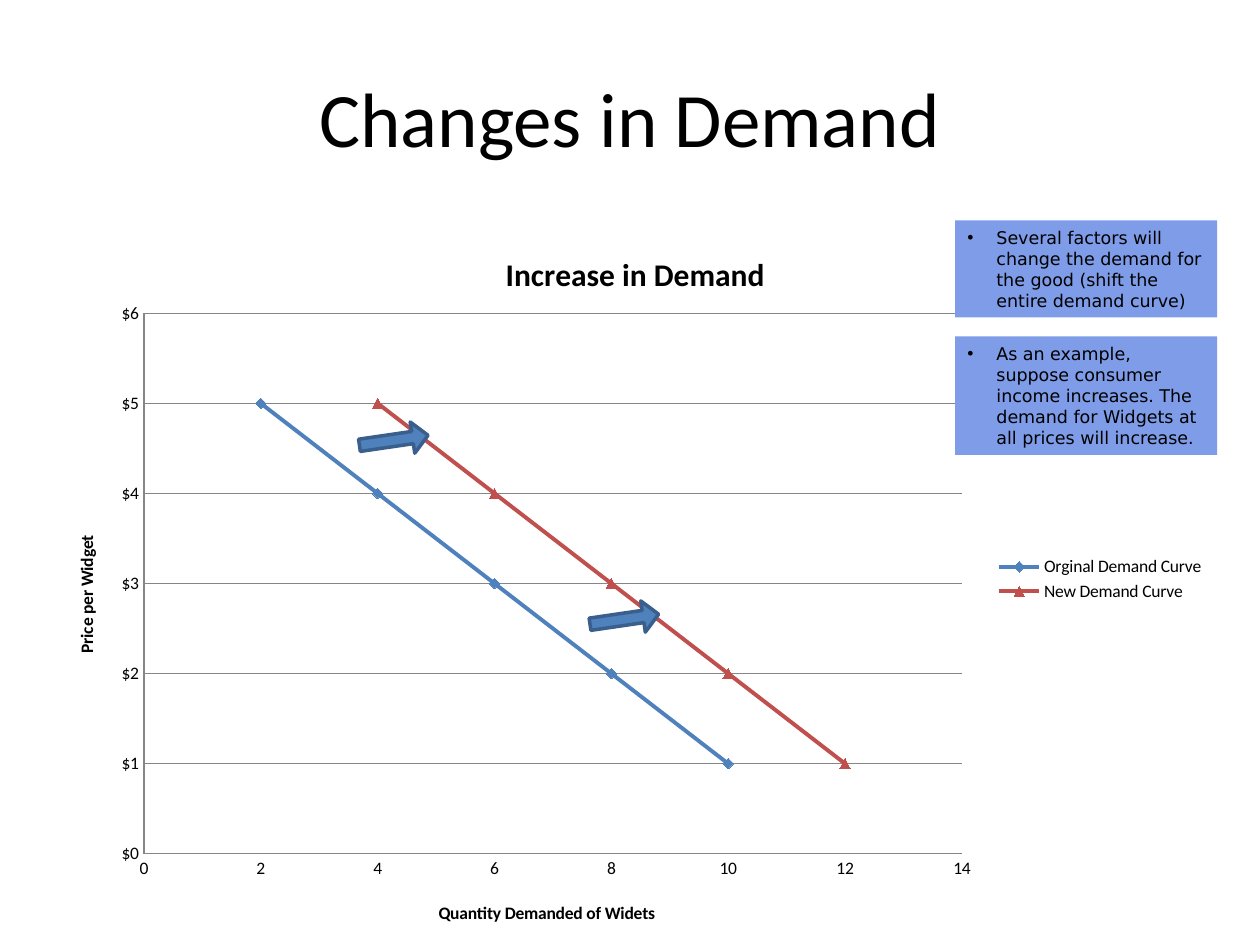
import dataclasses

import lxml.etree
import pptx
import pptx.chart.data
import pptx.dml.color
import pptx.enum.chart
import pptx.enum.shapes
import pptx.enum.text
import pptx.oxml
import pptx.oxml.ns
import pptx.util
from pptx.util import Inches

qn = pptx.oxml.ns.qn


@dataclasses.dataclass(frozen=True)
class Theme:
    """Colours, fonts and type sizes of the slide."""
    ink: str = "000000"
    paper: str = "FFFFFF"
    grid: str = "868686"
    note: str = "7E9CE8"
    original_curve: str = "4F81BD"
    new_curve: str = "C0504D"
    arrow_edge: str = "3A5F8C"
    heading_font: str = "Calibri"
    note_font: str = "DejaVu Sans"
    title_size: int = 44
    chart_title_size: int = 18
    small_size: int = 10


@dataclasses.dataclass(frozen=True)
class Box:
    """A region in inches."""
    left: float
    top: float
    width: float
    height: float

    def lengths(self):
        """Return the four values as lengths."""
        return tuple(Inches(value) for value in dataclasses.astuple(self))


THEME = Theme()


def rgb(code):
    """Turn a hex code into a colour."""
    return pptx.dml.color.RGBColor.from_string(code)


def format_font(font, size=THEME.small_size, name=THEME.heading_font, bold=False):
    """Set the size, typeface, weight and ink of a font."""
    font.size = pptx.util.Pt(size)
    font.name = name
    font.bold = bold
    font.color.rgb = rgb(THEME.ink)


def write_text(frame, text, align=None, **font_format):
    """Write one formatted paragraph and return it."""
    paragraph = frame.paragraphs[0]
    paragraph.alignment = align
    run = paragraph.add_run()
    run.text = text
    format_font(run.font, **font_format)
    return paragraph


def add_bullet(paragraph, indent):
    """Give a paragraph a hanging bullet and half a line before it."""
    properties = paragraph._p.get_or_add_pPr()
    properties.set("marL", str(indent))
    properties.set("indent", str(-indent))
    space = lxml.etree.SubElement(properties, qn("a:spcBef"))
    lxml.etree.SubElement(space, qn("a:spcPct"), val="50000")
    lxml.etree.SubElement(properties, qn("a:buFont"), typeface="Arial")
    lxml.etree.SubElement(properties, qn("a:buChar"), char="•")


def place_part(part, inner=False, **fractions):
    """Place a chart part by fractions of the chart area."""
    for old_layout in part.findall(qn("c:layout")):
        part.remove(old_layout)
    layout = pptx.oxml.parse_xml(f"<c:layout {pptx.oxml.ns.nsdecls('c')}/>")
    manual = lxml.etree.SubElement(layout, qn("c:manualLayout"))
    if inner:
        lxml.etree.SubElement(manual, qn("c:layoutTarget"), val="inner")
    for axis in ("x", "y"):
        lxml.etree.SubElement(manual, qn(f"c:{axis}Mode"), val="edge")
    for key, value in fractions.items():
        lxml.etree.SubElement(manual, qn(f"c:{key}"), val=str(value))
    leaders = (qn("c:tx"), qn("c:legendPos"))
    position = sum(child.tag in leaders for child in part)
    part.insert(position, layout)


def add_title(slide, box):
    """Fill the title placeholder."""
    title = slide.shapes.title
    title.left, title.top, title.width, title.height = box.lengths()
    title.text_frame.vertical_anchor = pptx.enum.text.MSO_ANCHOR.MIDDLE
    write_text(title.text_frame, "Changes in Demand", size=THEME.title_size,
               align=pptx.enum.text.PP_ALIGN.CENTER)


def format_axis(axis, title, maximum, step, number_format):
    """Set the title, scale, labels and line of an axis."""
    write_text(axis.axis_title.text_frame, title, bold=True)
    axis.minimum_scale, axis.maximum_scale, axis.major_unit = 0, maximum, step
    axis.major_tick_mark = pptx.enum.chart.XL_TICK_MARK.NONE
    axis.minor_tick_mark = pptx.enum.chart.XL_TICK_MARK.NONE
    axis.tick_labels.number_format = number_format
    axis.tick_labels.number_format_is_linked = False
    format_font(axis.tick_labels.font)
    axis.format.line.color.rgb = rgb(THEME.grid)


def add_demand_chart(slide, box):
    """Plot the demand curve before and after the shift."""
    marker_style = pptx.enum.chart.XL_MARKER_STYLE
    prices = (5, 4, 3, 2, 1)
    curves = (
        ("Orginal Demand Curve", (2, 4, 6, 8, 10), THEME.original_curve, marker_style.DIAMOND),
        ("New Demand Curve", (4, 6, 8, 10, 12), THEME.new_curve, marker_style.TRIANGLE),
    )
    data = pptx.chart.data.XyChartData()
    for name, quantities, _, _ in curves:
        curve = data.add_series(name)
        for quantity, price in zip(quantities, prices):
            curve.add_data_point(quantity, price)
    chart = slide.shapes.add_chart(
        pptx.enum.chart.XL_CHART_TYPE.XY_SCATTER_SMOOTH, *box.lengths(), data).chart
    format_font(chart.font)
    plot = chart.plots[0]
    plot.vary_by_categories = False
    for series, (_, _, colour, style) in zip(plot.series, curves):
        series.smooth = False
        series.format.line.color.rgb = rgb(colour)
        series.format.line.width = pptx.util.Pt(2.25)
        series.marker.style = style
        series.marker.size = 6
        series.marker.format.fill.solid()
        series.marker.format.fill.fore_color.rgb = rgb(colour)
        series.marker.format.line.color.rgb = rgb(colour)

    quantity_axis, price_axis = chart.category_axis, chart.value_axis
    format_axis(quantity_axis, "Quantity Demanded of Widets", 14, 2, "0")
    format_axis(price_axis, "Price per Widget", 6, 1, '"$"0')
    quantity_axis.has_major_gridlines = False
    price_axis.has_major_gridlines = True
    price_axis.major_gridlines.format.line.color.rgb = rgb(THEME.grid)

    chart.has_title = True
    write_text(chart.chart_title.text_frame, "Increase in Demand",
               size=THEME.chart_title_size, bold=True)
    chart.has_legend = True
    chart.legend.position = pptx.enum.chart.XL_LEGEND_POSITION.RIGHT
    chart.legend.include_in_layout = False
    format_font(chart.legend.font)
    place_part(chart._chartSpace.chart.plotArea, inner=True, x=0.087, y=0.14, w=0.696, h=0.736)
    place_part(chart.chart_title._element, x=0.39, y=0.05)
    place_part(quantity_axis.axis_title._element, x=0.335, y=0.936)
    place_part(price_axis.axis_title._element, x=0.026, y=0.438)
    place_part(chart.legend._element, x=0.81, y=0.465)


def add_shape(slide, kind, box, colour):
    """Add a filled preset shape without line or shadow."""
    shape = slide.shapes.add_shape(kind, *box.lengths())
    shape.shadow.inherit = False
    shape.fill.solid()
    shape.fill.fore_color.rgb = rgb(colour)
    shape.line.fill.background()
    return shape


def add_explanations(slide, box):
    """Stack the explanations, the first at the top and the last at the bottom."""
    explanations = (
        ("Several factors will change the demand for the good (shift the entire demand curve)",
         0, 0.77),
        ("As an example, suppose consumer income increases. "
         "The demand for Widgets at all prices will increase.", box.height - 0.94, 0.94),
    )
    for text, offset, height in explanations:
        panel = add_shape(slide, pptx.enum.shapes.MSO_SHAPE.RECTANGLE,
                          Box(box.left, box.top + offset, box.width, height), THEME.note)
        frame = panel.text_frame
        frame.word_wrap = True
        frame.auto_size = pptx.enum.text.MSO_AUTO_SIZE.SHAPE_TO_FIT_TEXT
        frame.vertical_anchor = pptx.enum.text.MSO_ANCHOR.TOP
        paragraph = write_text(frame, text, name=THEME.note_font,
                               align=pptx.enum.text.PP_ALIGN.LEFT)
        add_bullet(paragraph, Inches(0.23))


def add_shift_arrows(slide, box):
    """Mark the shift with arrows at two opposite corners of the box."""
    width, height = 0.25, 0.55
    corners = ((box.left, box.top),
               (box.left + box.width - width, box.top + box.height - height))
    for left, top in corners:
        arrow = add_shape(slide, pptx.enum.shapes.MSO_SHAPE.UP_ARROW,
                          Box(left, top, width, height), THEME.original_curve)
        arrow.rotation = 81.7
        arrow.adjustments[0] = 0.39
        arrow.adjustments[1] = 0.5
        arrow.line.color.rgb = rgb(THEME.arrow_edge)
        arrow.line.width = pptx.util.Pt(2)


def main():
    """Build and save the slide."""
    deck = pptx.Presentation()
    deck.slide_width, deck.slide_height = Inches(10), Inches(7.5)
    slide = deck.slides.add_slide(deck.slide_layouts.get_by_name("Title Only"))
    slide.background.fill.solid()
    slide.background.fill.fore_color.rgb = rgb(THEME.paper)
    add_title(slide, Box(0.5, 0.3, 9, 1.25))
    add_demand_chart(slide, Box(0.33, 1.67, 9.33, 5.83))
    add_explanations(slide, Box(7.58, 1.75, 2.08, 1.86))
    add_shift_arrows(slide, Box(3, 3.22, 2.08, 1.97))
    deck.save("out.pptx")


if __name__ == "__main__":
    main()
